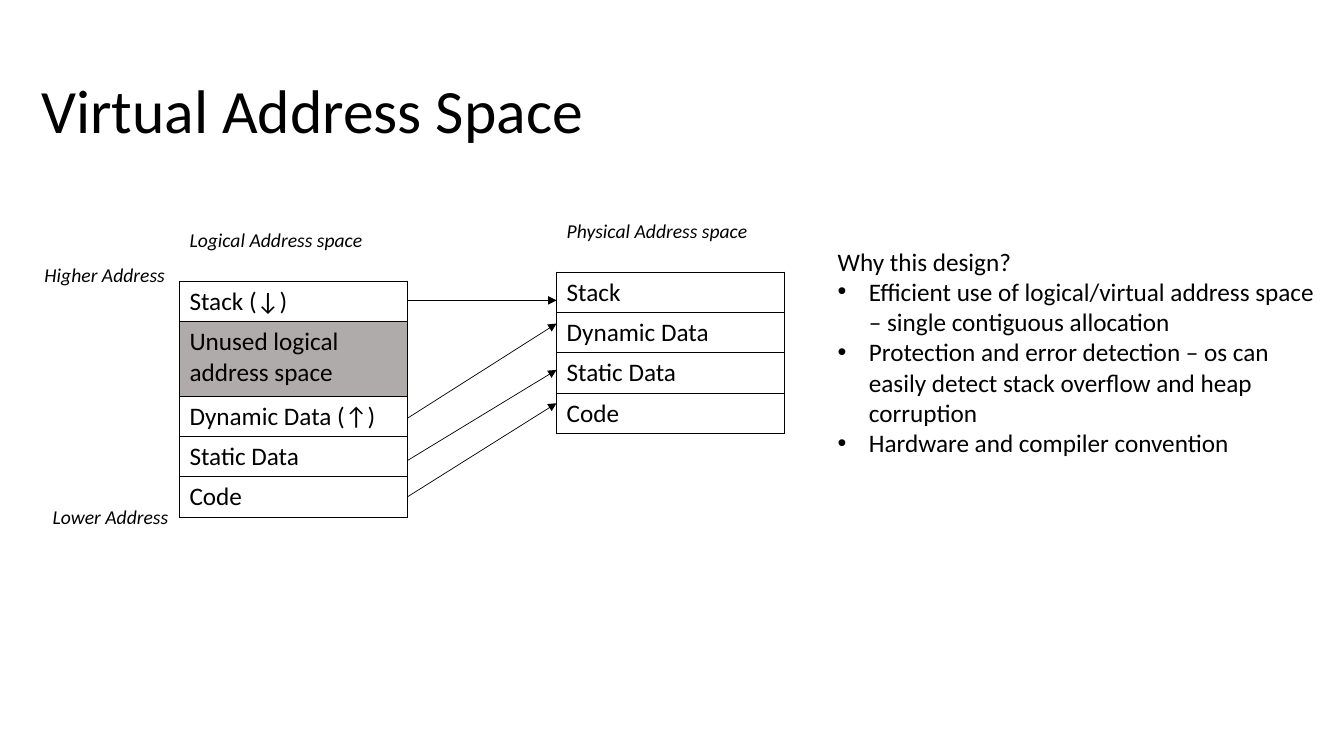
from lxml import etree
from pptx import Presentation
from pptx.dml.color import RGBColor
from pptx.enum import shapes, text
from pptx.oxml import ns
from pptx.util import Inches, Pt

BLACK = RGBColor(0x00, 0x00, 0x00)
GRAY = RGBColor(0xAF, 0xAB, 0xAB)
FONT = "Calibri"
LEFT, RIGHT = text.PP_ALIGN.LEFT, text.PP_ALIGN.RIGHT

presentation = Presentation()
presentation.slide_width = Inches(13.33)
presentation.slide_height = Inches(7.5)
slide = presentation.slides.add_slide(presentation.slide_layouts[6])


def add_run(paragraph, wording, size, italic=False):
    run = paragraph.add_run()
    run.text = wording
    run.font.name = FONT
    run.font.size = Pt(size)
    run.font.italic = italic
    run.font.color.rgb = BLACK


def add_text_box(left, top, width, height, wording, size, italic=False, align=LEFT):
    box = slide.shapes.add_textbox(Inches(left), Inches(top), Inches(width), Inches(height))
    frame = box.text_frame
    frame.word_wrap = True
    frame.paragraphs[0].alignment = align
    add_run(frame.paragraphs[0], wording, size, italic)
    return frame


# Title
title = add_text_box(0.31, 0.4, 12.11, 1.45, "Virtual Address Space", 44)
title.vertical_anchor = text.MSO_ANCHOR.MIDDLE
title.paragraphs[0].line_spacing = 0.9

# Address space tables: a caption row, then bordered memory segments
TABLE_WIDTH, CAPTION_HEIGHT, SEGMENT_HEIGHT, UNUSED_HEIGHT = 2.26, 0.57, 0.4, 0.74
UNUSED = "Unused logical address space"
address_spaces = [
    (1.78, 2.22, ["Logical Address space", "Stack (↓)", UNUSED,
                  "Dynamic Data (↑)", "Static Data", "Code"]),
    (5.52, 2.13, ["Physical Address space", "Stack", "Dynamic Data",
                  "Static Data", "Code"]),
]
for left, top, labels in address_spaces:
    heights = [CAPTION_HEIGHT] + [
        UNUSED_HEIGHT if label == UNUSED else SEGMENT_HEIGHT for label in labels[1:]]
    table = slide.shapes.add_table(
        len(labels), 1, Inches(left), Inches(top),
        Inches(TABLE_WIDTH), Inches(sum(heights))).table
    table.first_row = False
    table.horz_banding = False
    table.columns[0].width = Inches(TABLE_WIDTH)
    for index, (label, height) in enumerate(zip(labels, heights)):
        is_caption = index == 0
        table.rows[index].height = Inches(height)
        cell = table.cell(index, 0)
        add_run(cell.text_frame.paragraphs[0], label, 14 if is_caption else 18, is_caption)

        # Cell borders
        properties = cell._tc.get_or_add_tcPr()
        for side in ("lnL", "lnR", "lnT", "lnB"):
            border = etree.SubElement(properties, ns.qn("a:" + side), w=str(Pt(1)))
            if is_caption and side != "lnB":
                etree.SubElement(border, ns.qn("a:noFill"))
            else:
                fill = etree.SubElement(border, ns.qn("a:solidFill"))
                etree.SubElement(fill, ns.qn("a:srgbClr"), val=str(BLACK))

        if label == UNUSED:
            cell.fill.solid()
            cell.fill.fore_color.rgb = GRAY
        else:
            cell.fill.background()

# Mapping arrows from logical to physical segments
ARROW_START, ARROW_END = 1.78 + TABLE_WIDTH, 5.52
for start_y, end_y in [(2.98, 2.98), (4.15, 3.21), (4.57, 3.67), (4.93, 4)]:
    arrow = slide.shapes.add_connector(
        shapes.MSO_CONNECTOR.STRAIGHT, Inches(ARROW_START), Inches(start_y),
        Inches(ARROW_END), Inches(end_y))
    arrow.line.color.rgb = BLACK
    arrow.line.width = Pt(0.5)
    etree.SubElement(arrow.line._get_or_add_ln(), ns.qn("a:tailEnd"), type="triangle")
    etree.SubElement(arrow._element.spPr, ns.qn("a:effectLst"))

# Address direction labels
add_text_box(0.31, 4.96, 1.46, 0.34, "Lower Address", 14, True, RIGHT)
add_text_box(0.32, 2.56, 1.46, 0.34, "Higher Address ", 14, True, RIGHT)

# Design rationale
rationale = add_text_box(8.21, 2.39, 4.96, 2.83, "Why this design?", 18)
for reason in [
    "Efficient use of logical/virtual address space – single contiguous allocation",
    "Protection and error detection – os can easily detect stack overflow and heap corruption",
    "Hardware and compiler convention",
]:
    paragraph = rationale.add_paragraph()
    add_run(paragraph, reason, 18)
    properties = paragraph._p.get_or_add_pPr()
    properties.set("marL", str(Inches(0.31)))
    properties.set("indent", str(Inches(-0.31)))
    etree.SubElement(properties, ns.qn("a:buFont"), typeface="Arial")
    etree.SubElement(properties, ns.qn("a:buChar"), char="•")

presentation.save("out.pptx")
